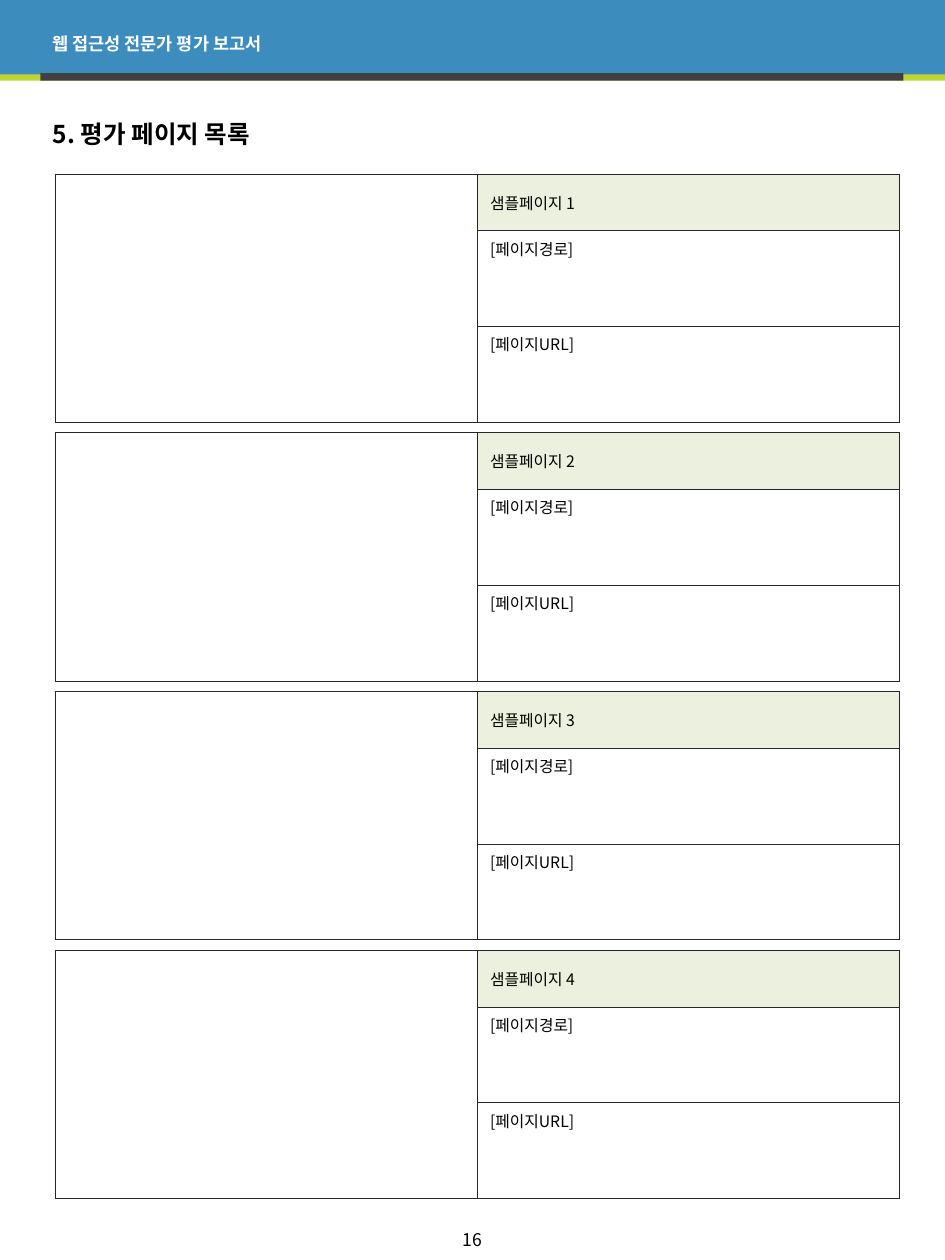
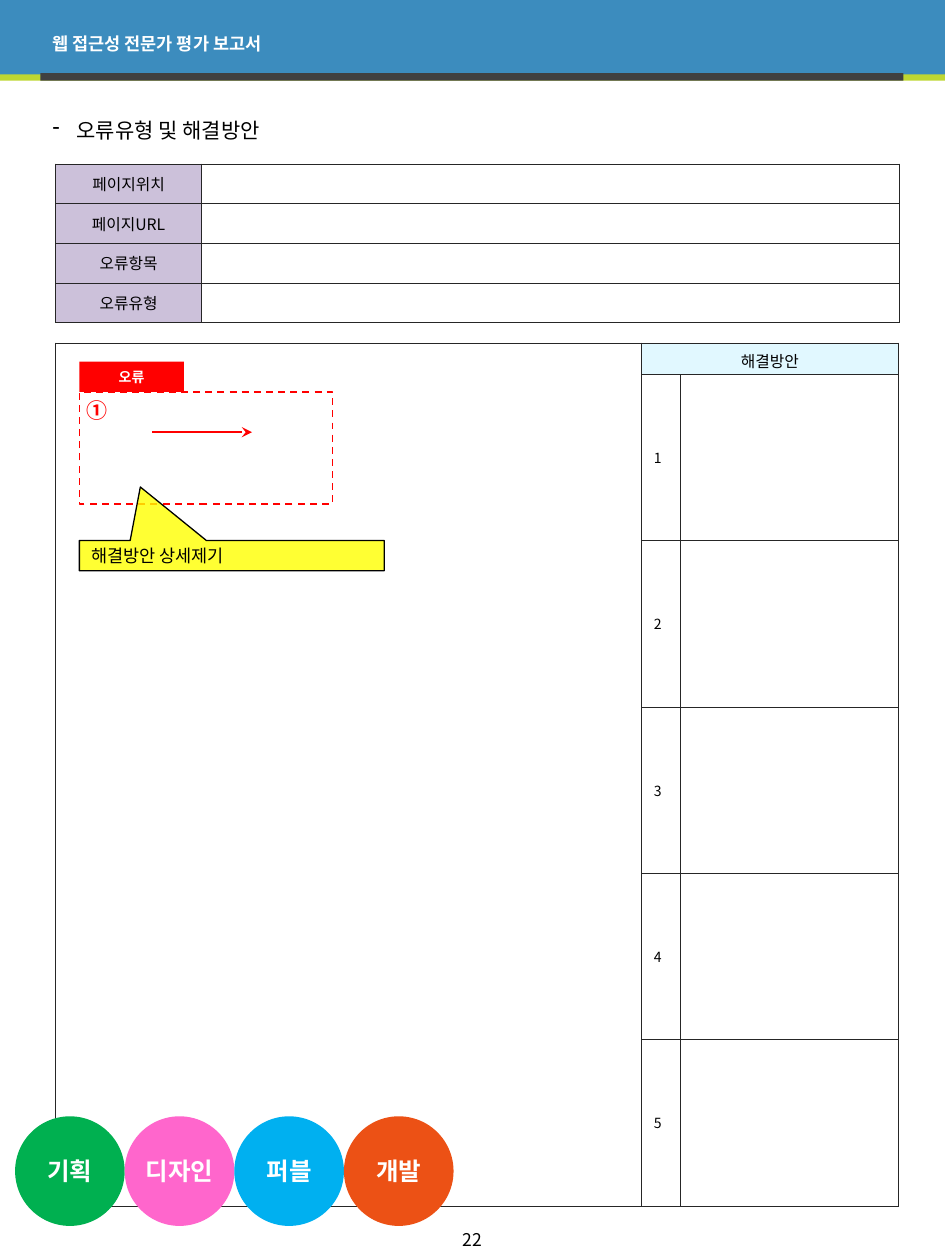
from lxml import etree
from pptx import Presentation
from pptx.dml.color import RGBColor
from pptx.enum.dml import MSO_LINE
from pptx.enum.shapes import MSO_CONNECTOR, MSO_SHAPE
from pptx.enum.text import MSO_ANCHOR, PP_ALIGN
from pptx.oxml.ns import qn
from pptx.util import Inches, Pt

RECT = MSO_SHAPE.RECTANGLE
OVAL = MSO_SHAPE.OVAL
CALLOUT = MSO_SHAPE.RECTANGULAR_CALLOUT
STRAIGHT = MSO_CONNECTOR.STRAIGHT
DASH = MSO_LINE.DASH
TOP, MIDDLE = MSO_ANCHOR.TOP, MSO_ANCHOR.MIDDLE
LEFT, CENTER = PP_ALIGN.LEFT, PP_ALIGN.CENTER

FONT = "Noto Sans CJK KR"
BLACK, WHITE, RED = "000000", "FFFFFF", "FF0000"
BLUE, LIME, DARK = "3C8CBE", "BED732", "404040"
BORDER, GREEN, PURPLE, SKY = "262626", "EBF1DE", "CCC1DA", "E1F8FF"


def color(value):
    return RGBColor.from_string(value)


def inches(box):
    return [Inches(value) for value in box]


def child(parent, tag, **attrs):
    return etree.SubElement(parent, qn(tag), **attrs)


class Report:
    def __init__(self):
        self.deck = Presentation()
        self.deck.slide_width = Inches(7.5)
        self.deck.slide_height = Inches(10)
        self.shapes = None

    def page(self, number):
        slide = self.deck.slides.add_slide(self.deck.slide_layouts[6])
        self.shapes = slide.shapes
        self.shape(RECT, (0, 0.58, 7.5, 0.06), LIME)
        self.shape(RECT, (0, 0, 7.5, 0.59), BLUE)
        self.shape(RECT, (0.32, 0.58, 6.85, 0.06), DARK)
        self.text((0.32, 0.11, 6.85, 0.47), "웹 접근성 전문가 평가 보고서",
                  10, WHITE, True)
        self.text((0, 9.65, 7.5, 0.37), str(number), 10, align=CENTER)

    def style(self, frame, text, size, tint=BLACK, bold=False, align=LEFT):
        frame.text = text
        para = frame.paragraphs[0]
        para.alignment = align
        for run in para.runs:
            font = run.font
            font.size = Pt(size)
            font.bold = bold
            font.color.rgb = color(tint)
            font.name = FONT
            child(font._element, "a:ea", typeface=FONT)
        if not text:
            child(para._p, "a:endParaRPr", sz=str(size * 100))
        return para

    def text(self, box, text, size, tint=BLACK, bold=False, align=LEFT,
             anchor=MIDDLE):
        frame = self.shapes.add_textbox(*inches(box)).text_frame
        frame.word_wrap = True
        frame.vertical_anchor = anchor
        return self.style(frame, text, size, tint, bold, align)

    def bullet(self, box, text, size):
        para = self.text(box, text, size, anchor=TOP)
        para.line_spacing = Pt(18)
        props = para._p.get_or_add_pPr()
        indent = Inches(0.19)
        props.set("marL", str(indent))
        props.set("indent", str(-indent))
        child(props, "a:buChar", char="-")

    def shape(self, kind, box, fill=None, line=None, width=1):
        shape = self.shapes.add_shape(kind, *inches(box))
        shape.shadow.inherit = False
        if fill:
            shape.fill.solid()
            shape.fill.fore_color.rgb = color(fill)
        else:
            shape.fill.background()
        if line:
            shape.line.color.rgb = color(line)
            shape.line.width = Pt(width)
        else:
            shape.line.fill.background()
        return shape

    def label(self, shape, text, size, tint=WHITE, bold=True, align=CENTER,
              inset=0.1):
        frame = shape.text_frame
        frame.word_wrap = True
        frame.vertical_anchor = MIDDLE
        frame.margin_left = frame.margin_right = Inches(inset)
        self.style(frame, text, size, tint, bold, align)

    def arrow(self, start, end, tint, width):
        line = self.shapes.add_connector(STRAIGHT, *inches(start + end))
        line.line.color.rgb = color(tint)
        line.line.width = Pt(width)
        props = line._element.spPr
        child(props.find(qn("a:ln")), "a:tailEnd", type="stealth")
        child(props, "a:effectLst")

    def table(self, left, top, cols, rows):
        box = inches((left, top, sum(cols), sum(rows)))
        table = self.shapes.add_table(len(rows), len(cols), *box).table
        table.first_row = table.horz_banding = False
        for col, width in zip(table.columns, cols):
            col.width = Inches(width)
        for row, height in zip(table.rows, rows):
            row.height = Inches(height)
        for cell in table.iter_cells():
            props = cell._tc.get_or_add_tcPr()
            for side in "LRTB":
                edge = child(props, f"a:ln{side}", w=str(Pt(0.25)))
                fill = child(edge, "a:solidFill")
                child(fill, "a:srgbClr", val=BORDER)
            self.cell(cell)
        return table

    def cell(self, cell, text="", size=9, fill=None, align=LEFT,
             anchor=MIDDLE):
        if fill:
            cell.fill.solid()
            cell.fill.fore_color.rgb = color(fill)
        else:
            cell.fill.background()
        cell.vertical_anchor = anchor
        for mark in cell._tc.findall(".//" + qn("a:endParaRPr")):
            mark.getparent().remove(mark)
        self.style(cell.text_frame, text, size, align=align)


def page_list(report):
    report.page(16)
    report.text((0.32, 0.83, 6.85, 0.47), "5. 평가 페이지 목록", 14, bold=True)
    step = (7.54 - 1.38) / 3
    for i in range(4):
        table = report.table(0.44, 1.38 + i * step, [3.35] * 2,
                             [0.45, 0.76, 0.76])
        table.cell(0, 0).merge(table.cell(2, 0))
        report.cell(table.cell(0, 1), f"샘플페이지 {i + 1}", fill=GREEN)
        for row, text in enumerate(("[페이지경로]", "[페이지URL]"), 1):
            report.cell(table.cell(row, 1), text, anchor=TOP)


def error_page(report):
    report.page(22)
    fixes = report.table(0.44, 2.72, [4.65, 0.31, 1.73], [0.25] + [1.32] * 5)
    fixes.cell(0, 0).merge(fixes.cell(5, 0))
    fixes.cell(0, 1).merge(fixes.cell(0, 2))
    report.cell(fixes.cell(0, 1), "해결방안", fill=SKY, align=CENTER)
    for row in range(1, 6):
        report.cell(fixes.cell(row, 1), str(row), 8)

    facts = ("페이지위치", "페이지URL", "오류항목", "오류유형")
    info = report.table(0.44, 1.3, [1.16, 5.54], [1.26 / 4] * 4)
    for row, text in enumerate(facts):
        report.cell(info.cell(row, 0), text, fill=PURPLE, align=CENTER)

    report.bullet((0.32, 0.83, 6.85, 0.33), "오류유형 및 해결방안", 12)
    teams = (("기획", "00B050"), ("디자인", "FF66CC"),
             ("퍼블", "00B0F0"), ("개발", "EC5115"))
    for i, (team, tint) in enumerate(teams):
        circle = report.shape(OVAL, (0.12 + i * 0.87, 8.86, 0.87, 0.87), tint)
        report.label(circle, team, 14, inset=0)

    report.text((0.59, 3.11, 0.24, 0.3), "①", 12, RED, True, anchor=TOP)
    area = report.shape(RECT, (0.63, 3.11, 2.01, 0.89), line=RED)
    area.line.dash_style = DASH
    tag = report.shape(RECT, (0.63, 2.87, 0.83, 0.24), RED)
    report.label(tag, "오류", 8)
    report.arrow((1.21, 3.43), (2, 3.43), RED, 1.5)

    note = report.shape(CALLOUT, (0.63, 4.29, 2.42, 0.24), "FFFF00", BLACK,
                        0.75)
    note.adjustments[0] = -0.3
    note.adjustments[1] = -2.27
    tone = note._element.spPr.find(qn("a:solidFill"))[0]
    child(tone, "a:alpha", val="80000")
    report.label(note, "해결방안 상세제기", 10, BLACK, False, LEFT)


def main():
    report = Report()
    page_list(report)
    error_page(report)
    report.deck.save("out.pptx")


if __name__ == "__main__":
    main()
